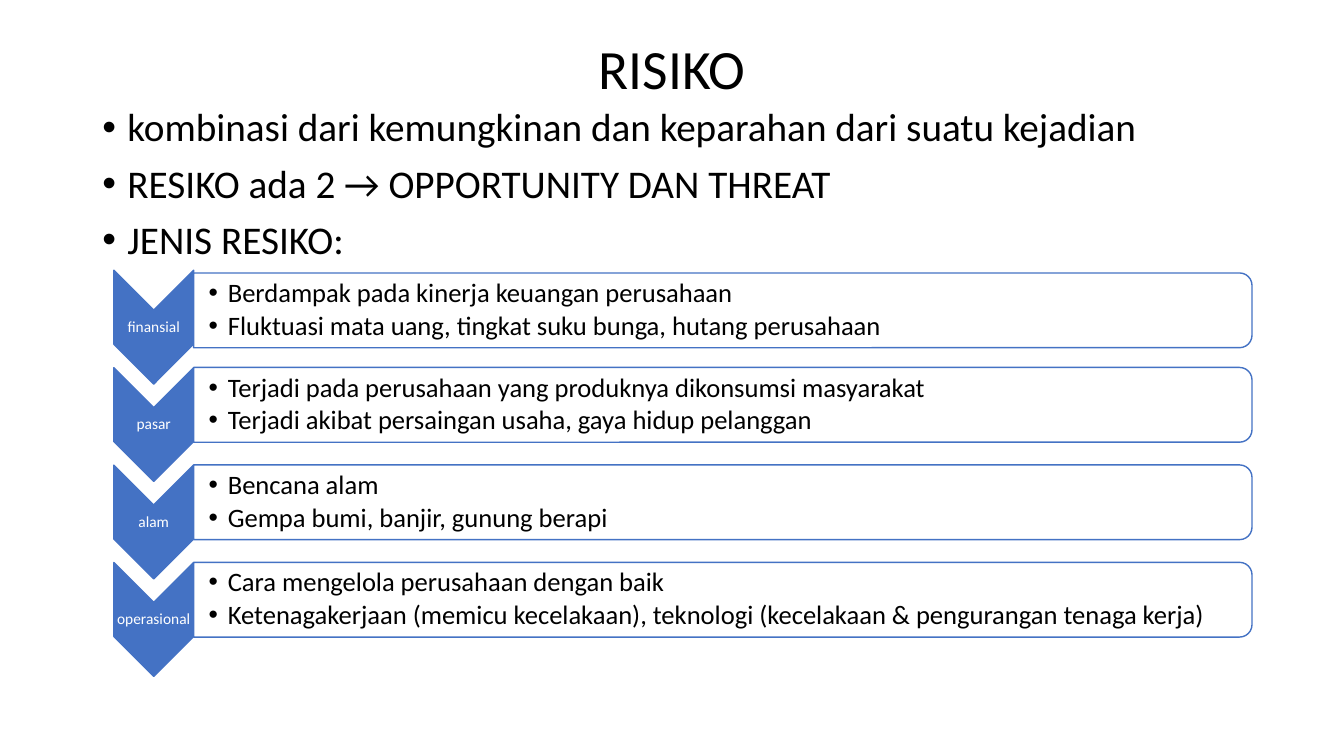
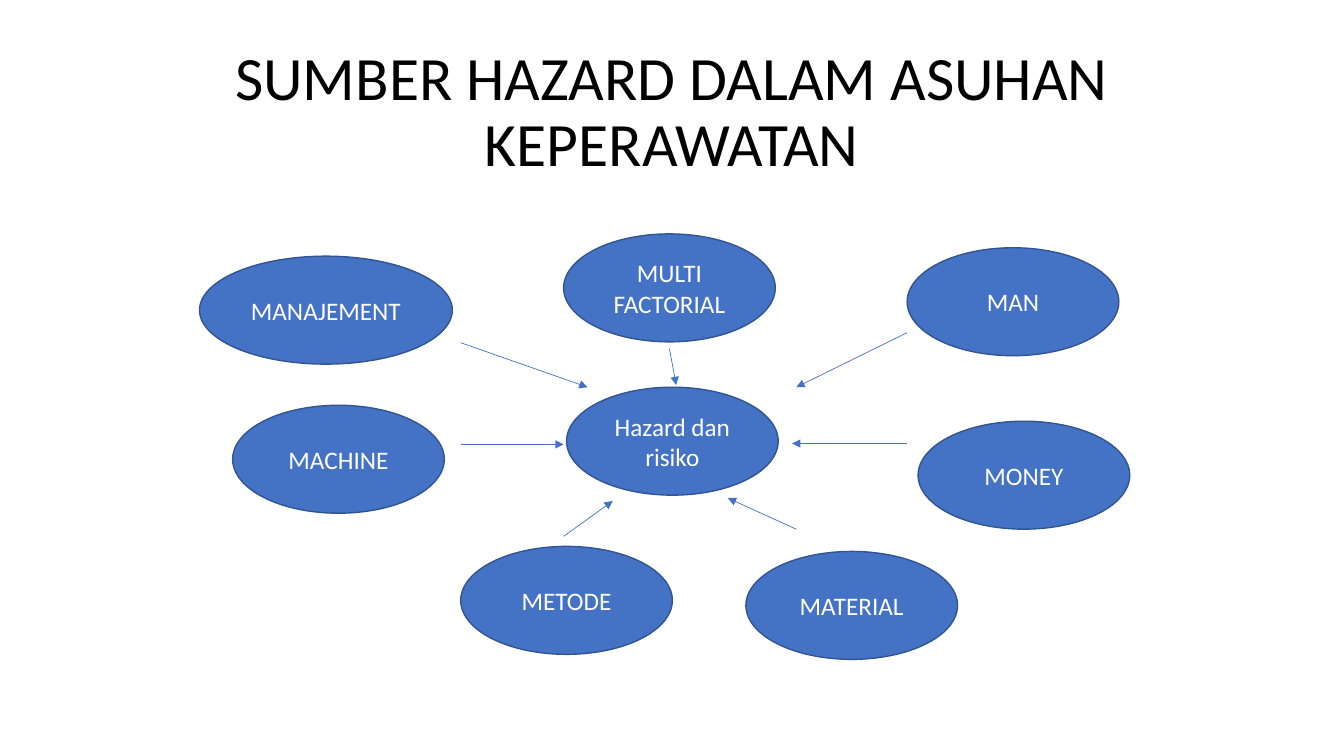
from lxml import etree
from pptx import Presentation
from pptx.dml.color import RGBColor
from pptx.enum.shapes import MSO_CONNECTOR, MSO_SHAPE
from pptx.enum.text import MSO_ANCHOR, PP_ALIGN
from pptx.oxml.ns import qn
from pptx.util import Emu, Inches, Pt

CHEVRON = MSO_SHAPE.CHEVRON
PANEL = MSO_SHAPE.ROUND_2_SAME_RECTANGLE
ELLIPSE = MSO_SHAPE.OVAL
STRAIGHT = MSO_CONNECTOR.STRAIGHT
TOP, MIDDLE = MSO_ANCHOR.TOP, MSO_ANCHOR.MIDDLE
LEFT, CENTER = PP_ALIGN.LEFT, PP_ALIGN.CENTER

COLUMNS, ROWS = 32, 18
CELL = 381000  # square grid cell, in EMU
MARGIN, CONTENT_WIDTH = 2.2, 27.6


def color(hex_string):
    return RGBColor.from_string(hex_string)


def cells(count):
    return Emu(round(count * CELL))


class Deck:
    FONT = "Calibri"
    TEXT, LIGHT = "000000", "FFFFFF"
    ACCENT, OUTLINE = "4472C4", "325491"

    def __init__(self):
        self.presentation = Presentation()
        self.presentation.slide_width = cells(COLUMNS)
        self.presentation.slide_height = cells(ROWS)
        self.slide = None

    def new_slide(self, title, title_rows, title_size=44):
        layout = self.presentation.slide_layouts[6]
        self.slide = self.presentation.slides.add_slide(layout)
        self.text_box((MARGIN, 0.96, CONTENT_WIDTH, title_rows), [title],
                      title_size, anchor=MIDDLE, align=CENTER)

    def fill_text(self, shape, lines, size, ink=TEXT, anchor=TOP, align=LEFT,
                  spacing=0.9, before=0, after=0, indent=0):
        """Fill a shape with paragraphs; an indent in inches adds bullets."""
        frame = shape.text_frame
        frame.word_wrap = True
        frame.vertical_anchor = anchor
        for index, line in enumerate(lines):
            paragraph = frame.add_paragraph() if index else frame.paragraphs[0]
            if indent:
                self.add_bullet(paragraph, indent)
            paragraph.alignment = align
            paragraph.line_spacing = spacing
            paragraph.space_before = Pt(before if index else 0)
            paragraph.space_after = Pt(after)
            run = paragraph.add_run()
            run.text = line
            run.font.name = self.FONT
            run.font.size = Pt(size)
            run.font.color.rgb = color(ink)

    def add_bullet(self, paragraph, indent):
        properties = paragraph._p.get_or_add_pPr()
        properties.set("marL", str(Inches(indent)))
        properties.set("indent", str(-Inches(indent)))
        etree.SubElement(properties, qn("a:buFont"), typeface="Arial")
        etree.SubElement(properties, qn("a:buChar"), char="•")

    def text_box(self, box, lines, size, insets=None, **style):
        shape = self.slide.shapes.add_textbox(*map(cells, box))
        if insets:
            frame = shape.text_frame
            (frame.margin_left, frame.margin_top, frame.margin_right,
             frame.margin_bottom) = map(Inches, insets)
        self.fill_text(shape, lines, size, **style)

    def shape(self, kind, box, fill, line):
        shape = self.slide.shapes.add_shape(kind, *map(cells, box))
        shape.shadow.inherit = False
        shape.fill.solid()
        shape.fill.fore_color.rgb = color(fill)
        shape.line.color.rgb = color(line)
        shape.line.width = Pt(1)
        return shape

    def turned_shape(self, kind, center, width, height, fill):
        """Draw a shape turned by 90 degrees; width and height are as seen."""
        x, y = center
        box = (x - height / 2, y - width / 2, height, width)
        self.shape(kind, box, fill, self.ACCENT).rotation = 90

    def risk_row(self, label, points, middle, lift):
        """Draw a chevron with its panel, whose middle lies higher by lift."""
        chevron_x, chevron_width, chevron_height = 3.66, 1.9, 2.71
        panel_left, panel_width, panel_height = 4.61, 25.2, 1.78
        text_width, text_height, label_height = 25.1, 1.58, 0.82
        panel_middle = middle - lift
        self.turned_shape(CHEVRON, (chevron_x, middle), chevron_width,
                          chevron_height, self.ACCENT)
        self.text_box((chevron_x - chevron_width / 2, middle - label_height / 2,
                       chevron_width, label_height), [label], 11,
                      insets=[0.01] * 4, ink=self.LIGHT, anchor=MIDDLE,
                      align=CENTER)
        self.turned_shape(PANEL, (panel_left + panel_width / 2, panel_middle),
                          panel_width, panel_height, self.LIGHT)
        self.text_box((panel_left, panel_middle - text_height / 2,
                       text_width, text_height), points, 19,
                      insets=(0.15, 0.01, 0.01, 0.01), anchor=MIDDLE,
                      after=2.85, indent=0.19)

    def ellipse(self, text, left, top, width=5.04):
        shape = self.shape(ELLIPSE, (left, top, width, 2.57),
                           self.ACCENT, self.OUTLINE)
        self.fill_text(shape, [text], 18, ink=self.LIGHT, anchor=MIDDLE,
                       align=CENTER, spacing=1)

    def arrow(self, start, end):
        connector = self.slide.shapes.add_connector(
            STRAIGHT, *map(cells, (*start, *end)))
        connector.line.color.rgb = color(self.ACCENT)
        connector.line.width = Pt(0.5)
        etree.SubElement(connector.line._get_or_add_ln(), qn("a:tailEnd"),
                         type="triangle")
        etree.SubElement(connector._element.spPr, qn("a:effectLst"))


def add_risk_slide(deck):
    deck.new_slide("RISIKO", 1.5, 39.6)
    deck.text_box((MARGIN, 2.45, CONTENT_WIDTH, 13.75), [
        "kombinasi dari kemungkinan dan keparahan dari suatu kejadian",
        "RESIKO ada 2 → OPPORTUNITY DAN THREAT",
        "JENIS RESIKO:",
    ], 28, before=10, indent=0.25)
    risks = [
        ("finansial", 0.4, [
            "Berdampak pada kinerja keuangan perusahaan",
            "Fluktuasi mata uang, tingkat suku bunga, hutang perusahaan"]),
        ("pasar", 0.47, [
            "Terjadi pada perusahaan yang produknya dikonsumsi masyarakat",
            "Terjadi akibat persaingan usaha, gaya hidup pelanggan"]),
        ("alam", 0.47, [
            "Bencana alam",
            "Gempa bumi, banjir, gunung berapi"]),
        ("operasional", 0.47, [
            "Cara mengelola perusahaan dengan baik",
            "Ketenagakerjaan (memicu kecelakaan), teknologi "
            "(kecelakaan & pengurangan tenaga kerja)"]),
    ]
    first_middle, row_step = 7.79, 2.32
    for index, (label, lift, points) in enumerate(risks):
        deck.risk_row(label, points, first_middle + index * row_step, lift)


def add_hazard_slide(deck):
    deck.new_slide("SUMBER HAZARD DALAM ASUHAN KEPERAWATAN", 3.48)
    deck.ellipse("Hazard dan risiko", 13.49, 9.22)
    deck.ellipse("MAN", 21.6, 5.9)
    deck.ellipse("MONEY", 21.86, 10.03)
    deck.ellipse("MATERIAL", 17.76, 13.13)
    deck.ellipse("METODE", 10.97, 13.01)
    deck.ellipse("MACHINE", 5.54, 9.65)
    deck.ellipse("MANAJEMENT", 4.75, 6.1, width=6.02)
    deck.ellipse("MULTI FACTORIAL", 13.42, 5.57)
    arrows = [
        ((21.6, 7.92), (18.96, 9.22)),
        ((21.6, 10.56), (18.86, 10.56)),
        ((18.96, 12.6), (17.33, 11.86)),
        ((13.42, 12.77), (14.59, 11.93)),
        ((10.97, 10.58), (13.42, 10.58)),
        ((10.97, 8.16), (13.99, 9.22)),
        ((15.94, 8.3), (16.1, 9.17)),
    ]
    for start, end in arrows:
        deck.arrow(start, end)


def main():
    deck = Deck()
    add_risk_slide(deck)
    add_hazard_slide(deck)
    deck.presentation.save("out.pptx")


if __name__ == "__main__":
    main()
